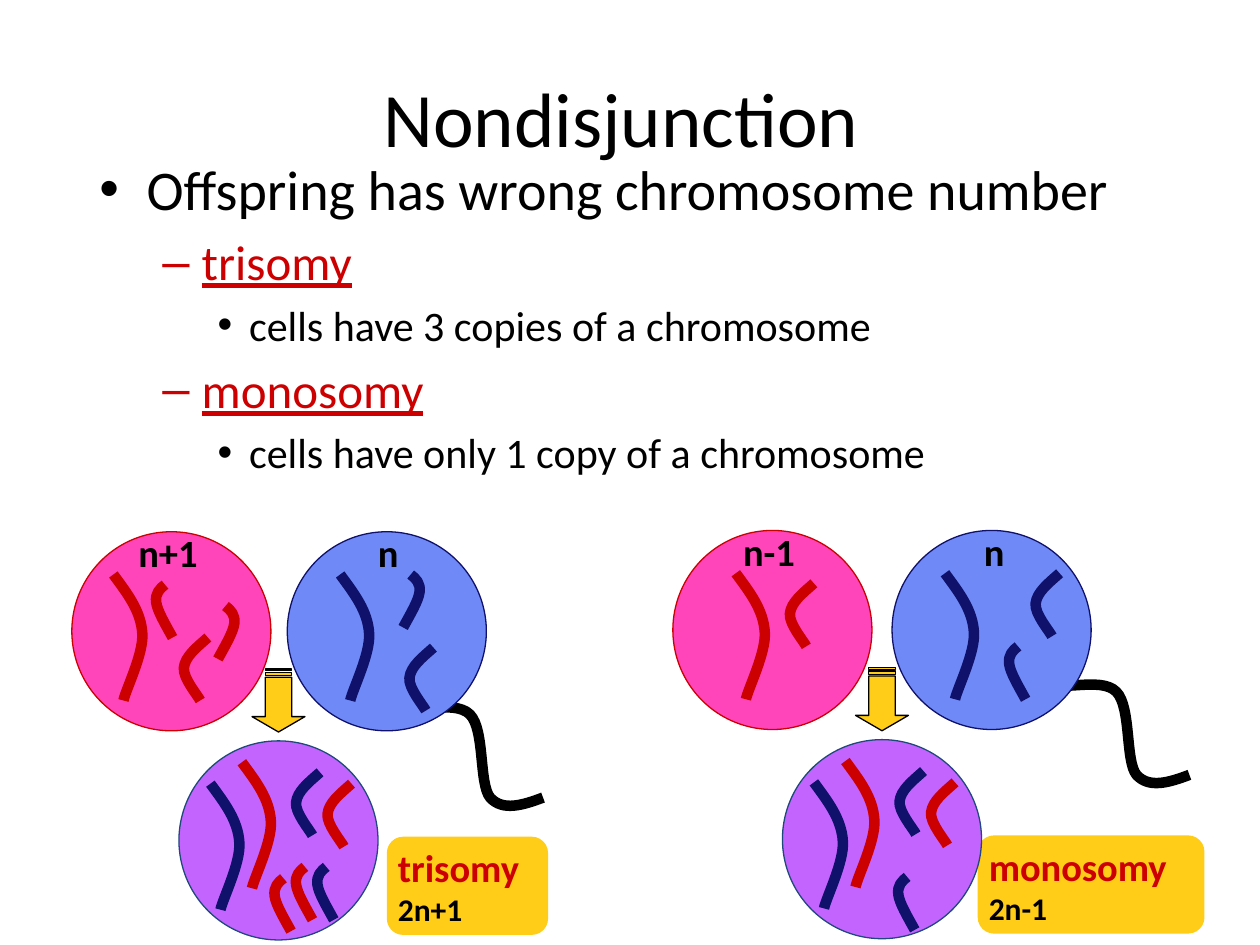
from dataclasses import dataclass
from pptx import Presentation
from pptx import util as u
from pptx.dml.color import RGBColor
from pptx.enum import shapes, text
from pptx.oxml.ns import qn
from lxml import etree


@dataclass(frozen=True)
class Theme:
    font: str = "Calibri"
    mark: str = "Arial"
    black: str = "000000"
    red: str = "CC0000"
    navy: str = "0F116A"
    edge: str = "1F497D"
    pink: str = "FF45B9"
    blue: str = "6F89F7"
    plum: str = "C364FF"
    gold: str = "FFCC18"
    title: int = 44
    levels: tuple = (32, 28, 24)
    tag: int = 22
    note: int = 18
    thin: float = 0.75
    thick: float = 6


T = Theme()
COLS, ROWS = 100, 75
WIDE = u.Inches(10)
UNIT = WIDE // COLS
SIZE = 15.8  # cell diameter in columns

# Cubic curves: a start point, then three points per segment
CURVES = {
    "long": [(0, 0), (1.1, 1.5), (2.2, 2.9), (2.3, 4.7),
             (2.4, 6.3), (1, 9.1), (0.8, 10)],
    "hook": [(2, 0), (1.1, 0.8), (0.2, 1.5), (0.1, 2.4),
             (0, 3.2), (1.2, 4.6), (1.4, 5)],
    "short": [(1.4, 4.2), (0.8, 3.1), (0.2, 2.1), (0.1, 1.4),
              (0, 0.7), (0.4, 0.3), (0.8, 0)],
    "tail": [(0, 0), (-0.1, -0.2), (-0.1, -0.3), (0, 0.8),
             (0.1, 1.9), (-0.3, 5.5), (0.8, 6.6),
             (1.9, 7.7), (5.4, 6.2), (6.7, 7.5),
             (7.9, 8.7), (7.4, 13), (8.3, 14.1),
             (9.3, 15.2), (10.9, 14.7), (12.5, 14.1)],
}
CURVES["flip"] = [(1.4 - x, y) for x, y in CURVES["short"]]


def emu(n):
    return round(n * UNIT)


def rgb(code):
    return RGBColor.from_string(code)


def style(item, fill, line, width=T.thin):
    item.shadow.inherit = False
    if fill:
        item.fill.solid()
        item.fill.fore_color.rgb = rgb(fill)
    else:
        item.fill.background()
    if line:
        item.line.color.rgb = rgb(line)
        item.line.width = u.Pt(width)
    else:
        item.line.fill.background()


def write(par, words, size, color=T.black, bold=False, under=False,
          align=text.PP_ALIGN.LEFT):
    par.alignment = align
    run = par.add_run()
    run.text = words
    font = run.font
    font.name, font.size = T.font, u.Pt(size)
    font.bold, font.underline = bold, under
    font.color.rgb = rgb(color)


def bullet(par, mark, left, hang):
    props = par._p.get_or_add_pPr()
    props.set("marL", str(emu(left)))
    props.set("indent", str(-emu(hang)))
    etree.SubElement(props, qn("a:buFont")).set("typeface", T.mark)
    etree.SubElement(props, qn("a:buChar")).set("char", mark)


def box(page, x, y, w, h, wrap=True, anchor=text.MSO_ANCHOR.MIDDLE):
    frame = page.shapes.add_textbox(*map(emu, (x, y, w, h))).text_frame
    frame.word_wrap, frame.vertical_anchor = wrap, anchor
    return frame


def bend(item):
    """Turn each three straight steps into one cubic segment."""
    steps = list(item._element.iter(qn("a:lnTo")))
    for i in range(0, len(steps), 3):
        cubic = etree.Element(qn("a:cubicBezTo"))
        steps[i].addprevious(cubic)
        for step in steps[i:i + 3]:
            cubic.append(step[0])
            step.getparent().remove(step)


def curve(group, kind, x, y, fill, line):
    dots = [(emu(x + a), emu(y + b)) for a, b in CURVES[kind]]
    draft = group.shapes.build_freeform(*dots[0], scale=1.0)
    draft.add_line_segments(dots[1:], close=False)
    item = draft.convert_to_shape()
    bend(item)
    style(item, fill, line, T.thick)


def cell(page, x, y, fill, line, genes, tail=None):
    group = page.shapes.add_group_shape()
    if tail:
        curve(group, "tail", x + tail[0], y + tail[1], None, T.black)
    disc = group.shapes.add_shape(
        shapes.MSO_SHAPE.OVAL, *map(emu, (x, y, SIZE, SIZE)))
    style(disc, fill, line)
    for kind, dx, dy, color in genes:
        curve(group, kind, x + dx, y + dy, fill, color)


def arrow(page, x, y):
    item = page.shapes.add_shape(
        shapes.MSO_SHAPE.STRIPED_RIGHT_ARROW, *map(emu, (x, y, 5, 4.2)))
    item.rotation = 90
    item.adjustments[0], item.adjustments[1] = 0.5, 0.29
    style(item, T.gold, T.black)


def badge(page, x, y, w, name, count):
    item = page.shapes.add_shape(
        shapes.MSO_SHAPE.ROUNDED_RECTANGLE, *map(emu, (x, y, w, 7.8)))
    style(item, T.gold, None)
    frame = item.text_frame
    frame.word_wrap = False
    frame.vertical_anchor = text.MSO_ANCHOR.MIDDLE
    frame.margin_left = frame.margin_right = emu(0.5)
    frame.margin_top = frame.margin_bottom = 0
    write(frame.paragraphs[0], name, T.tag, T.red, bold=True)
    write(frame.add_paragraph(), count, T.note, bold=True)


def label(page, x, y, w, words):
    frame = box(page, x, y, w, 4.7, wrap=False)
    write(frame.paragraphs[0], words, T.tag, bold=True)


def outline(page):
    frame = box(page, 6.9, 11.8, 90, 28.3, anchor=text.MSO_ANCHOR.TOP)
    marks = (("•", 3.75, 3.75), ("–", 8.13, 3.13), ("•", 11.88, 2.5))
    rows = ((0, "Offspring has wrong chromosome number"),
            (1, "trisomy"), (2, "cells have 3 copies of a chromosome"),
            (1, "monosomy"), (2, "cells have only 1 copy of a chromosome"))
    for i, (level, words) in enumerate(rows):
        par = frame.add_paragraph() if i else frame.paragraphs[0]
        par.level, size, term = level, T.levels[level], level == 1
        par.space_before = u.Pt(size * 0.2)
        write(par, words, size, T.red if term else T.black, under=term)
        if term:
            write(par, " ", size)
        bullet(par, *marks[level])


def main():
    deck = Presentation()
    deck.slide_width, deck.slide_height = WIDE, UNIT * ROWS
    page = deck.slides.add_slide(deck.slide_layouts[6])
    red, navy = T.red, T.navy

    # Trisomy label, title and bullets
    badge(page, 30.7, 66.4, 12.8, "trisomy", "2n+1")
    write(box(page, 5, 3, 90, 12.5).paragraphs[0], "Nondisjunction ",
          T.title, align=text.PP_ALIGN.CENTER)
    outline(page)

    # Chromosomes that both fertilised cells share
    pairs = [("long", 5, 1.7, red), ("long", 2.5, 3.4, navy),
             ("hook", 11.7, 3.4, red), ("hook", 9.2, 2.5, navy)]

    # Trisomy: egg with one extra chromosome
    cell(page, 5.7, 42.2, T.pink, red, [
        ("long", 3.3, 3.4, red), ("hook", 8.8, 8.4, red),
        ("flip", 11.6, 5.9, red), ("short", 6.6, 4.2, red)])
    cell(page, 22.8, 42.2, T.blue, navy, [
        ("long", 4.2, 3.4, navy), ("hook", 9.6, 9.2, navy),
        ("flip", 9.2, 3.4, navy)], tail=(7.8, 7))
    cell(page, 14.2, 58.8, T.plum, T.edge, pairs + [
        ("short", 10.9, 10, navy), ("short", 9.2, 10, red),
        ("short", 7.5, 10.9, red)])
    arrow(page, 19.6, 53.5)
    label(page, 10, 41.5, 7.4, "n+1")
    label(page, 29, 41.5, 3.9, "n")

    # Monosomy: egg with one chromosome missing
    badge(page, 77.6, 66.3, 18, "monosomy", "2n-1")
    cell(page, 70.8, 42.1, T.blue, navy, [
        ("long", 4.2, 3.4, navy), ("hook", 11.3, 3.4, navy),
        ("short", 9.2, 9.2, navy)], tail=(11.1, 5.3))
    cell(page, 53.4, 42.1, T.pink, red, [
        ("hook", 9.2, 4.2, red), ("long", 5, 3.4, red)])
    arrow(page, 67.5, 53.4)
    cell(page, 62.1, 58.7, T.plum, T.edge,
         pairs + [("short", 9.1, 10.9, navy)])
    label(page, 58, 41.4, 6.6, "n-1")
    label(page, 77.1, 41.4, 3.9, "n")

    deck.save("out.pptx")


if __name__ == "__main__":
    main()
